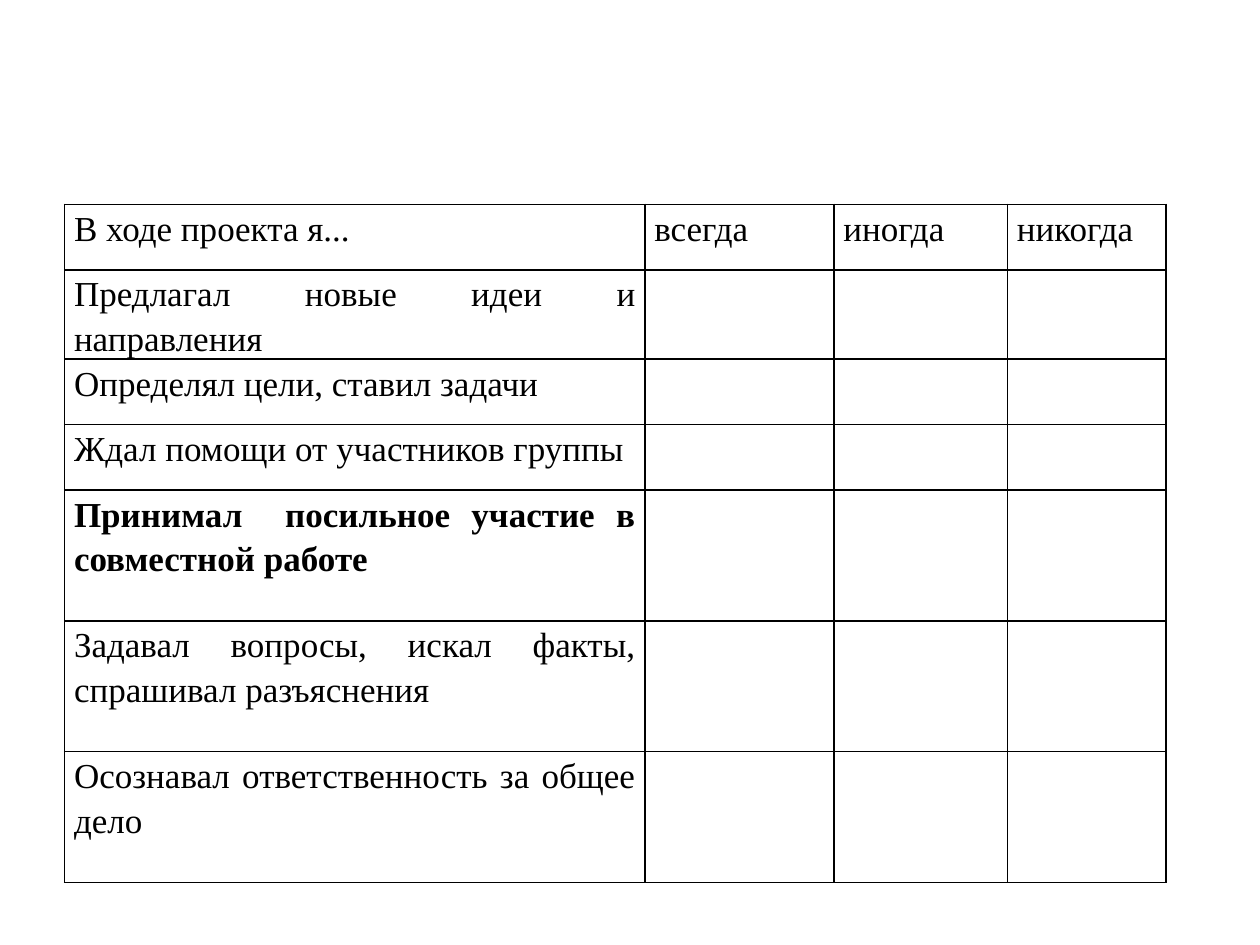
import pptx
import pptx.dml.color
import pptx.enum.text
import pptx.oxml
import pptx.oxml.ns
import pptx.util

Pt = pptx.util.Pt

# Content: heading row, then statements (text, bold)
HEADS = ["В ходе проекта я...", "всегда", "иногда", "никогда"]
ITEMS = [
    ("Предлагал новые идеи и направления", False),
    ("Определял цели, ставил задачи", False),
    ("Ждал помощи от участников группы", False),
    ("Принимал  посильное участие в совместной работе", True),
    ("Задавал вопросы, искал факты, спрашивал разъяснения", False),
    ("Осознавал ответственность за общее дело", False),
]

# Layout in points
LEFT, TOP = 36.9, 116.8
COLS = [331.6, 108, 99.2, 90.7]
UNIT = 37.4
ROWS = [UNIT] * 4 + [2 * UNIT] * 3
INSET = 5.4
INK, PAPER = "000000", "FFFFFF"


def color(code):
    return pptx.dml.color.RGBColor.from_string(code)


def border(cell):
    props = cell._tc.get_or_add_tcPr()
    for spot, side in enumerate(("lnL", "lnR", "lnT", "lnB")):
        line = pptx.oxml.parse_xml(
            f'<a:{side} {pptx.oxml.ns.nsdecls("a")} w="{Pt(1)}">'
            f'<a:solidFill><a:srgbClr val="{INK}"/></a:solidFill></a:{side}>')
        props.insert(spot, line)


def write(cell, text, bold=False):
    cell.margin_left = cell.margin_right = Pt(INSET)
    cell.margin_top = cell.margin_bottom = 0
    para = cell.text_frame.paragraphs[0]
    para.text = text
    para.alignment = pptx.enum.text.PP_ALIGN.JUSTIFY
    para.line_spacing = 1.15
    font = para.runs[0].font
    font.name, font.size, font.bold = "Times New Roman", Pt(20), bold
    font.color.rgb = color(INK)


# Slide
deck = pptx.Presentation()
deck.slide_width, deck.slide_height = Pt(720), Pt(540)
slide = deck.slides.add_slide(deck.slide_layouts[6])

# Table grid
frame = slide.shapes.add_table(len(ROWS), len(COLS), Pt(LEFT), Pt(TOP),
                               Pt(sum(COLS)), Pt(sum(ROWS)))
table = frame.table
table.first_row = table.horz_banding = False
for col, width in zip(table.columns, COLS):
    col.width = Pt(width)
for row, height in zip(table.rows, ROWS):
    row.height = Pt(height)
for cell in table.iter_cells():
    cell.fill.solid()
    cell.fill.fore_color.rgb = color(PAPER)
    border(cell)

# Text
for num, head in enumerate(HEADS):
    write(table.cell(0, num), head)
for num, (text, bold) in enumerate(ITEMS, 1):
    write(table.cell(num, 0), text, bold)

deck.save("out.pptx")
